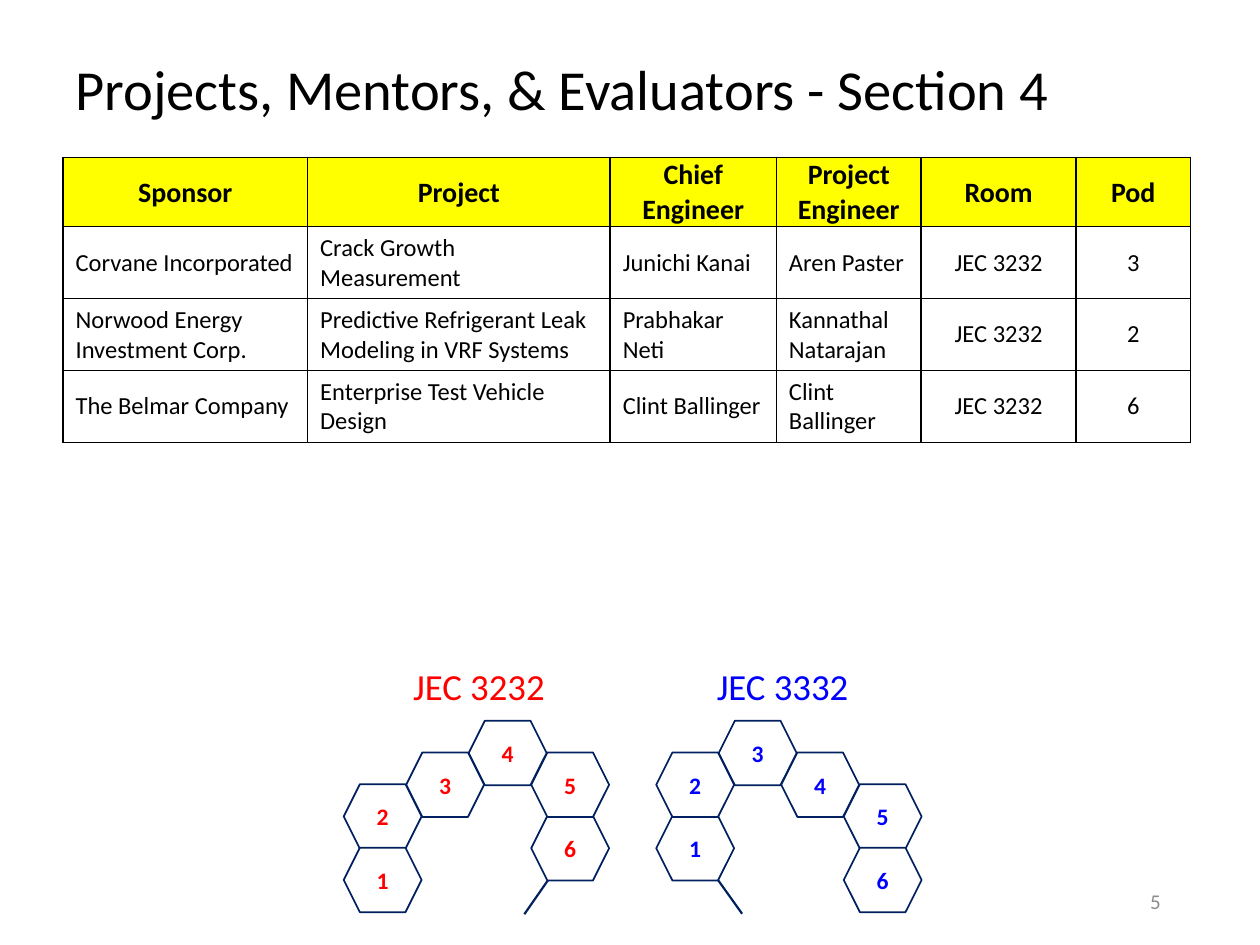
"""Build the Section 4 slide of projects, mentors and evaluators."""
from dataclasses import dataclass

import pptx
import pptx.dml.color
import pptx.enum.shapes
import pptx.enum.text
import pptx.oxml
import pptx.oxml.ns
import pptx.util

Cm = pptx.util.Cm
Pt = pptx.util.Pt
RGBColor = pptx.dml.color.RGBColor
Align = pptx.enum.text.PP_ALIGN
Anchor = pptx.enum.text.MSO_ANCHOR

BLACK = RGBColor(0, 0, 0)
WHITE = RGBColor(255, 255, 255)
YELLOW = RGBColor(255, 255, 0)
RED = RGBColor(255, 0, 0)
BLUE = RGBColor(0, 0, 255)
NAVY = RGBColor(0x00, 0x20, 0x60)
GRAY = RGBColor(0x8C, 0x8C, 0x8C)

COL_WIDTHS = (4.93, 6.1, 3.35, 2.92, 3.12, 2.31)
HEADER_HEIGHT, ROW_HEIGHT = 1.4, 1.45
ROWS = (
    ("Sponsor", "Project", "Chief Engineer", "Project Engineer", "Room", "Pod"),
    ("Corvane Incorporated", "Crack Growth Measurement", "Junichi Kanai",
     "Aren Paster", "JEC 3232", "3"),
    ("Norwood Energy Investment Corp.",
     "Predictive Refrigerant Leak Modeling in VRF Systems",
     "Prabhakar Neti", "Kannathal Natarajan", "JEC 3232", "2"),
    ("The Belmar Company", "Enterprise Test Vehicle Design",
     "Clint Ballinger", "Clint Ballinger", "JEC 3232", "6"),
)

POD_WIDTH, POD_HEIGHT = 1.57, 1.3
POD_STEP_X, POD_STEP_Y = 1.26, 0.64
PODS_TOP = 14.53


@dataclass
class Pod:
    number: int
    col: int
    half_row: int


@dataclass
class Room:
    name: str
    color: RGBColor
    left: float
    label_left: float
    door: tuple[float, float, float, float]
    pods: tuple[Pod, ...]


ROOMS = (
    Room("JEC 3232", RED, 6.93, 8.08, (11.94, 16.46, 10.57, 18.43),
         (Pod(6, 3, 3), Pod(5, 3, 1), Pod(4, 2, 0),
          Pod(3, 1, 1), Pod(2, 0, 2), Pod(1, 0, 4))),
    Room("JEC 3332", BLUE, 13.23, 14.2, (13.56, 16.46, 14.96, 18.42),
         (Pod(1, 0, 3), Pod(2, 0, 1), Pod(3, 1, 0),
          Pod(4, 2, 1), Pod(5, 3, 2), Pod(6, 3, 4))),
)


def set_text(tf, text: str, size: float, color: RGBColor,
             align=Align.LEFT, bold: bool = False) -> None:
    tf.text = text
    p = tf.paragraphs[0]
    p.alignment = align
    font = p.runs[0].font
    font.name, font.size, font.bold = "Calibri", Pt(size), bold
    font.color.rgb = color


def add_text(s, box: tuple[float, float, float, float], text: str, size: float,
             color: RGBColor, align=Align.LEFT, anchor=Anchor.MIDDLE,
             wrap: bool = True):
    sp = s.shapes.add_textbox(*map(Cm, box))
    sp.text_frame.word_wrap = wrap
    sp.text_frame.vertical_anchor = anchor
    set_text(sp.text_frame, text, size, color, align)
    return sp


def set_borders(cell) -> None:
    tc_pr = cell._tc.get_or_add_tcPr()
    for i, side in enumerate(("lnL", "lnR", "lnT", "lnB")):
        tc_pr.insert(i, pptx.oxml.parse_xml(
            f'<a:{side} {pptx.oxml.ns.nsdecls("a")} w="12700"><a:solidFill>'
            f'<a:srgbClr val="{BLACK}"/></a:solidFill></a:{side}>'))


def add_projects(s) -> None:
    heights = [HEADER_HEIGHT] + [ROW_HEIGHT] * (len(ROWS) - 1)
    table = s.shapes.add_table(
        len(ROWS), len(COL_WIDTHS), Cm(1.27), Cm(3.17),
        Cm(sum(COL_WIDTHS)), Cm(sum(heights))).table
    table.first_row = table.horz_banding = False
    for col, width in zip(table.columns, COL_WIDTHS):
        col.width = Cm(width)
    for r, (row, height) in enumerate(zip(ROWS, heights)):
        table.rows[r].height = Cm(height)
        header = r == 0
        for c, text in enumerate(row):
            cell = table.cell(r, c)
            align = Align.CENTER if header or c >= 4 else Align.LEFT
            set_text(cell.text_frame, text, 16 if header else 14, BLACK,
                     align, header)
            cell.vertical_anchor = Anchor.MIDDLE
            cell.fill.solid()
            cell.fill.fore_color.rgb = YELLOW if header else WHITE
            if header:
                cell.margin_left = cell.margin_right = cell.margin_top = Cm(0.02)
                cell.margin_bottom = 0
            set_borders(cell)


def add_door(s, ends: tuple[float, float, float, float]) -> None:
    line = s.shapes.add_connector(
        pptx.enum.shapes.MSO_CONNECTOR.STRAIGHT, *map(Cm, ends))
    line.line.color.rgb = NAVY
    line.line.width = Pt(1.25)
    line._element.spPr.append(
        pptx.oxml.parse_xml(f'<a:effectLst {pptx.oxml.ns.nsdecls("a")}/>'))


def add_pod(s, room: Room, pod: Pod) -> None:
    sp = s.shapes.add_shape(
        pptx.enum.shapes.MSO_SHAPE.HEXAGON,
        Cm(room.left + pod.col * POD_STEP_X),
        Cm(PODS_TOP + pod.half_row * POD_STEP_Y), Cm(POD_WIDTH), Cm(POD_HEIGHT))
    sp.shadow.inherit = False
    sp.fill.solid()
    sp.fill.fore_color.rgb = WHITE
    sp.line.color.rgb = NAVY
    sp.line.width = Pt(1)
    tf = sp.text_frame
    tf.margin_left = tf.margin_right = tf.margin_top = tf.margin_bottom = 0
    tf.vertical_anchor = Anchor.MIDDLE
    set_text(tf, str(pod.number), 13.5, room.color, Align.CENTER, True)


def add_room(s, room: Room) -> None:
    label = add_text(s, (room.label_left, 13.26, 3.2, 1.27), room.name, 21,
                     room.color, anchor=Anchor.TOP, wrap=False)
    label.fill.solid()
    label.fill.fore_color.rgb = WHITE
    add_door(s, room.door)
    for pod in room.pods:
        add_pod(s, room, pod)


def main() -> None:
    prs = pptx.Presentation()
    prs.slide_width, prs.slide_height = Cm(25.4), Cm(19.05)
    s = prs.slides.add_slide(prs.slide_layouts[6])
    title = add_text(s, (1.27, 0.76, 22.86, 2.21),
                     "Projects, Mentors, & Evaluators - Section 4", 32.3, BLACK)
    title.text_frame.paragraphs[0].line_spacing = 0.9
    add_projects(s)
    add_text(s, (17.93, 17.65, 5.72, 1.02), "5", 12, GRAY, Align.RIGHT)
    for room in ROOMS:
        add_room(s, room)
    prs.save("out.pptx")


if __name__ == "__main__":
    main()
